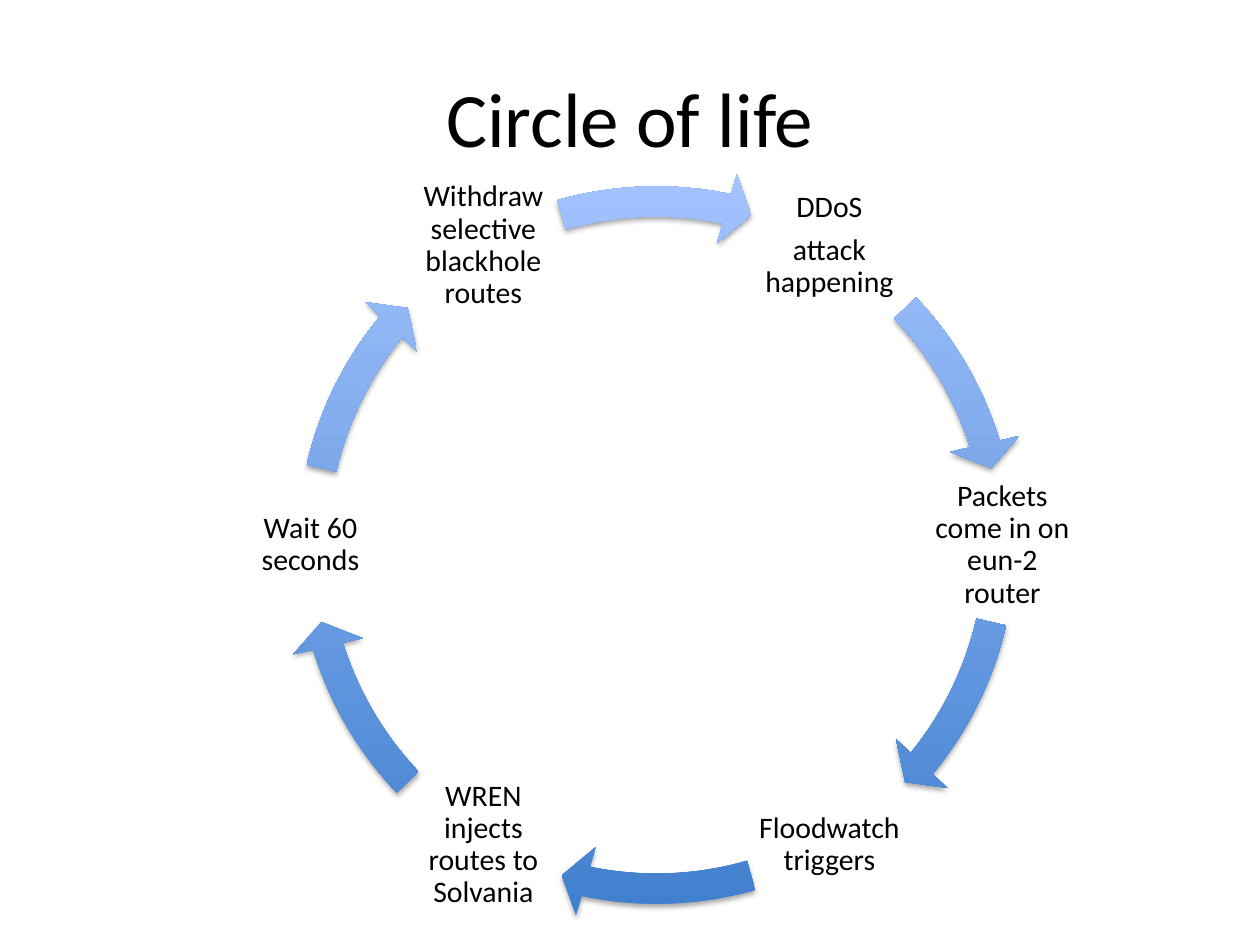
import math

import lxml.etree
import pptx
import pptx.dml.color
import pptx.enum.shapes
import pptx.enum.text
import pptx.oxml
import pptx.oxml.ns
import pptx.util

Pt = pptx.util.Pt
BLACK = pptx.dml.color.RGBColor(0x00, 0x00, 0x00)
DEEP_BLUE = pptx.dml.color.RGBColor(0x3F, 0x7F, 0xCE)
PALE_BLUE = pptx.dml.color.RGBColor(0xA4, 0xC4, 0xFF)
SHADOW = (
    '<a:outerShdw %s blurRad="40000" dist="23000" dir="5400000" rotWithShape="0">'
    '<a:srgbClr val="000000"><a:alpha val="35000"/></a:srgbClr></a:outerShdw>'
    % pptx.oxml.ns.nsdecls("a")
)

CENTER_X, CENTER_Y = 375.1, 311.5
RADIUS = 197.7
LABEL_SIZE = 88.4
RING_SIZE = 433.4
ADJUST_PER_DEGREE = 0.6

STEPS = [
    ["DDoS", "attack happening"],
    ["Packets come in on eun-2 router"],
    ["Floodwatch triggers"],
    ["WREN injects routes to Solvania"],
    ["Wait 60 seconds"],
    ["Withdraw selective blackhole routes"],
]
HALF_TURN_ARCS = [(316.38, 342.88), (12.94, 39.45), (73.98, 101.85)]


def style(paragraph, size):
    paragraph.alignment = pptx.enum.text.PP_ALIGN.CENTER
    paragraph.font.name = "Calibri"
    paragraph.font.size = Pt(size)
    paragraph.font.color.rgb = BLACK


presentation = pptx.Presentation()
presentation.slide_width = Pt(720)
presentation.slide_height = Pt(540)
slide = presentation.slides.add_slide(presentation.slide_layouts[5])

title = slide.shapes.title
title.left, title.top, title.width, title.height = Pt(36), Pt(21.6), Pt(648), Pt(90)
title.text_frame.text = "Circle of life"
title.text_frame.vertical_anchor = pptx.enum.text.MSO_ANCHOR.MIDDLE
style(title.text_frame.paragraphs[0], 44)

for index, lines in enumerate(STEPS):
    angle = math.radians(60 * index - 60)
    label = slide.shapes.add_textbox(
        Pt(CENTER_X + RADIUS * math.cos(angle) - LABEL_SIZE / 2),
        Pt(CENTER_Y + RADIUS * math.sin(angle) - LABEL_SIZE / 2),
        Pt(LABEL_SIZE),
        Pt(LABEL_SIZE),
    )
    frame = label.text_frame
    frame.word_wrap = True
    frame.vertical_anchor = pptx.enum.text.MSO_ANCHOR.MIDDLE
    frame.margin_left = frame.margin_right = Pt(1.7)
    frame.margin_top = frame.margin_bottom = Pt(1.7)
    frame.text = "\n".join(lines)
    for paragraph in frame.paragraphs:
        style(paragraph, 17)
        paragraph.line_spacing = 0.9
        paragraph.space_after = Pt(6)

    start, end = (
        (degrees + 180 * (index // 3)) % 360 for degrees in HALF_TURN_ARCS[index % 3]
    )
    arrow = slide.shapes.add_shape(
        pptx.enum.shapes.MSO_SHAPE.CIRCULAR_ARROW,
        Pt(CENTER_X - RING_SIZE / 2),
        Pt(CENTER_Y - RING_SIZE / 2),
        Pt(RING_SIZE),
        Pt(RING_SIZE),
    )
    settings = [0.04, 2.5, end * ADJUST_PER_DEGREE, start * ADJUST_PER_DEGREE, 0.047]
    for position, value in enumerate(settings):
        arrow.adjustments[position] = value
    arrow.fill.gradient()
    arrow.fill.gradient_angle = 90
    for stop, color, place in zip(
        arrow.fill.gradient_stops, (DEEP_BLUE, PALE_BLUE), (0, 1)
    ):
        stop.color.rgb = color
        stop.position = place
    arrow.line.fill.background()
    arrow.shadow.inherit = False
    effects = arrow.element.spPr.find(pptx.oxml.ns.qn("a:effectLst"))
    effects.append(lxml.etree.fromstring(SHADOW))

presentation.save("out.pptx")
